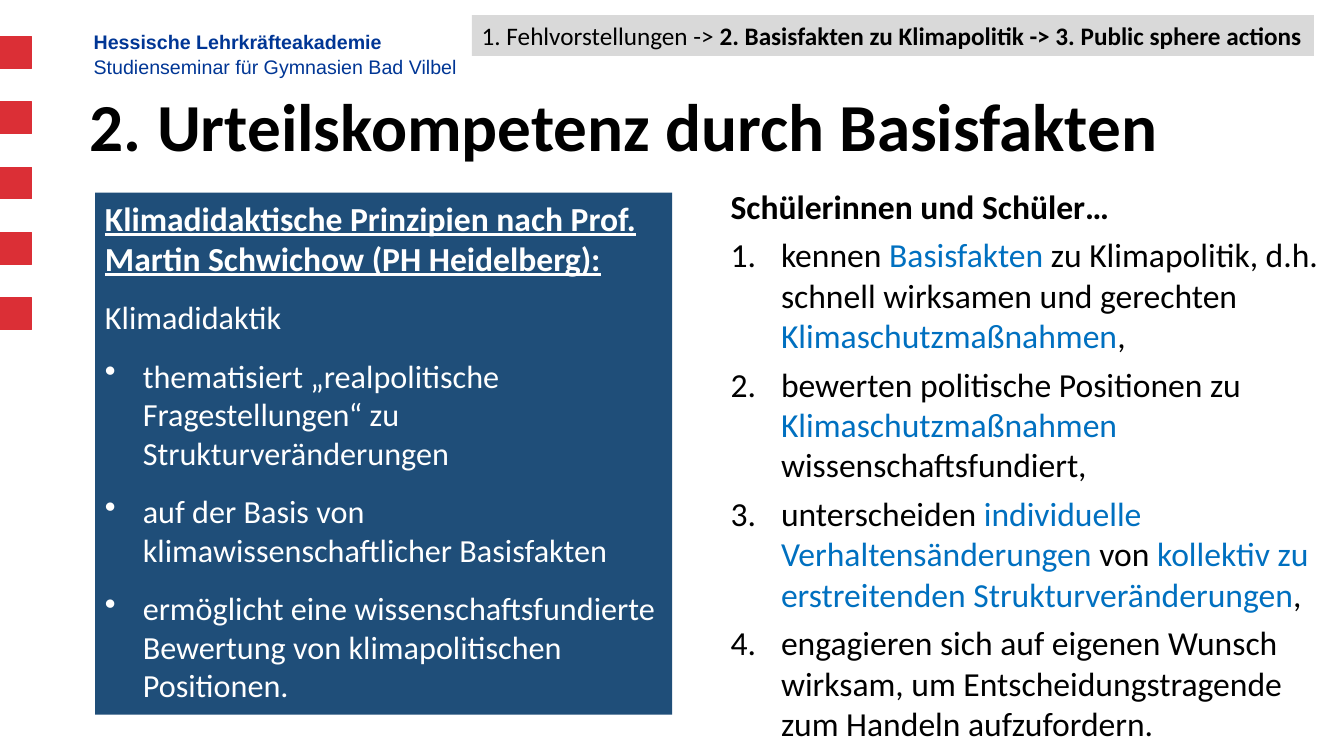
"""Build the slide on judging climate policy with basic facts."""
from lxml import etree
from pptx import Presentation
from pptx.dml.color import RGBColor
from pptx.enum.shapes import MSO_SHAPE
from pptx.enum.text import MSO_ANCHOR, PP_ALIGN
from pptx.oxml.ns import qn
from pptx.util import Pt

RECTANGLE = MSO_SHAPE.RECTANGLE
TOP, MIDDLE = MSO_ANCHOR.TOP, MSO_ANCHOR.MIDDLE
LEFT = PP_ALIGN.LEFT

BLACK = RGBColor(0x00, 0x00, 0x00)
WHITE = RGBColor(0xFF, 0xFF, 0xFF)
RED = RGBColor(0xDB, 0x2F, 0x36)
ACADEMY_BLUE = RGBColor(0x00, 0x36, 0x95)
HIGHLIGHT = RGBColor(0x00, 0x70, 0xC0)
PANEL_BLUE = RGBColor(0x1F, 0x4E, 0x79)
GREY = RGBColor(0xD9, 0xD9, 0xD9)

ACADEMY = "Hessische Lehrkräfteakademie"
SEMINAR = "Studienseminar für Gymnasien Bad Vilbel"
TITLE = "2. Urteilskompetenz durch Basisfakten"
STEP_DONE = "1. Fehlvorstellungen -> "
STEPS_NOW = "2. Basisfakten zu Klimapolitik -> 3. Public sphere actions"

PRINCIPLES_HEADING = "Klimadidaktische Prinzipien nach Prof. Martin Schwichow (PH Heidelberg):"
PRINCIPLES_SUBJECT = "Klimadidaktik"
PRINCIPLES = [
    "thematisiert „realpolitische Fragestellungen“ zu Strukturveränderungen",
    "auf der Basis von klimawissenschaftlicher Basisfakten",
    "ermöglicht eine wissenschaftsfundierte Bewertung von klimapolitischen Positionen.",
]

GOALS_HEADING = "Schülerinnen und Schüler…"
# Every second piece of a goal is highlighted.
GOALS = [
    ("kennen ", "Basisfakten", " zu Klimapolitik, d.h. schnell wirksamen und gerechten ",
     "Klimaschutzmaßnahmen", ","),
    ("bewerten politische Positionen zu ", "Klimaschutzmaßnahmen ", "wissenschaftsfundiert,"),
    ("unterscheiden ", "individuelle Verhaltensänderungen ", "von ",
     "kollektiv zu erstreitenden Strukturveränderungen", ","),
    ("engagieren sich auf eigenen Wunsch wirksam, um Entscheidungstragende \vzum Handeln aufzufordern.",),
]

SQUARE_COUNT, SQUARE_TOP, SQUARE_PITCH, SQUARE_SIZE = 5, 26.1, 46.65, 22.7


def prepare_frame(shape, anchor=TOP):
    frame = shape.text_frame
    frame.word_wrap = True
    frame.vertical_anchor = anchor
    return frame


def add_text_box(slide, left, top, width, height, anchor=TOP):
    box = slide.shapes.add_textbox(Pt(left), Pt(top), Pt(width), Pt(height))
    return prepare_frame(box, anchor)


def add_panel(slide, left, top, width, height, fill):
    panel = slide.shapes.add_shape(RECTANGLE, Pt(left), Pt(top), Pt(width), Pt(height))
    panel.shadow.inherit = False
    panel.fill.solid()
    panel.fill.fore_color.rgb = fill
    panel.line.fill.background()
    return panel


def add_paragraph(frame, pieces, size, color=BLACK, bold=False, font="Calibri",
                  before=0, after=0, bullet=None, hang=0):
    first = frame.paragraphs[0]
    paragraph = frame.add_paragraph() if first.runs else first
    paragraph.alignment = LEFT
    paragraph.space_before, paragraph.space_after = Pt(before), Pt(after)
    if bullet:
        properties = paragraph._p.get_or_add_pPr()
        properties.set("marL", str(Pt(hang)))
        properties.set("indent", str(-Pt(hang)))
        tag, attribute, value = bullet
        etree.SubElement(properties, qn(tag)).set(attribute, value)
    paragraph.font.name = font
    paragraph.font.size = Pt(size)
    paragraph.font.bold = bold
    paragraph.font.color.rgb = color
    for index, piece in enumerate(pieces):
        for part, line in enumerate(piece.split("\v")):
            if part:
                paragraph.add_line_break()
            run = paragraph.add_run()
            run.text = line
            if index % 2:
                run.font.color.rgb = HIGHLIGHT
    return paragraph


def add_letterhead(slide):
    frame = add_text_box(slide, 66.9, 19.4, 280, 36)
    frame.margin_left = frame.margin_right = frame.margin_bottom = 0
    frame.margin_top = Pt(1.7)
    add_paragraph(frame, [ACADEMY], 14, ACADEMY_BLUE, True, "Arial")
    add_paragraph(frame, [SEMINAR], 14, ACADEMY_BLUE, False, "Arial", before=1)
    for index in range(SQUARE_COUNT):
        square = add_panel(slide, 0, SQUARE_TOP + index * SQUARE_PITCH, SQUARE_SIZE, SQUARE_SIZE, RED)
        square.line.color.rgb = RED
        square.line.width = Pt(0.75)


def add_goals(slide):
    frame = add_text_box(slide, 514.8, 128.9, 468.7, 409.7)
    add_paragraph(frame, [GOALS_HEADING], 24, bold=True)
    for goal in GOALS:
        add_paragraph(frame, goal, 24, before=6, hang=36,
                      bullet=("a:buAutoNum", "type", "arabicPeriod"))


def add_principles(slide):
    frame = prepare_frame(add_panel(slide, 67.9, 137.5, 412.3, 372.9, PANEL_BLUE))
    heading = add_paragraph(frame, [PRINCIPLES_HEADING], 24, WHITE, True, after=8)
    heading.font.underline = True
    add_paragraph(frame, [PRINCIPLES_SUBJECT], 23, WHITE, before=6, after=8)
    for principle in PRINCIPLES:
        add_paragraph(frame, [principle], 23, WHITE, before=6, after=8, hang=27,
                      bullet=("a:buChar", "char", "•"))


def add_steps(slide):
    frame = prepare_frame(add_panel(slide, 337, 10.8, 601.5, 29.1, GREY))
    steps = add_paragraph(frame, [STEP_DONE], 18)
    current = steps.add_run()
    current.text = STEPS_NOW
    current.font.bold = True


def main():
    presentation = Presentation()
    presentation.slide_width, presentation.slide_height = Pt(960), Pt(540)
    slide = presentation.slides.add_slide(presentation.slide_layouts[6])
    add_letterhead(slide)
    title = add_paragraph(add_text_box(slide, 57.2, 64.1, 828, 56.9, MIDDLE), [TITLE], 48, bold=True)
    title.line_spacing = 0.9
    add_goals(slide)
    add_principles(slide)
    add_steps(slide)
    presentation.save("out.pptx")


if __name__ == "__main__":
    main()
